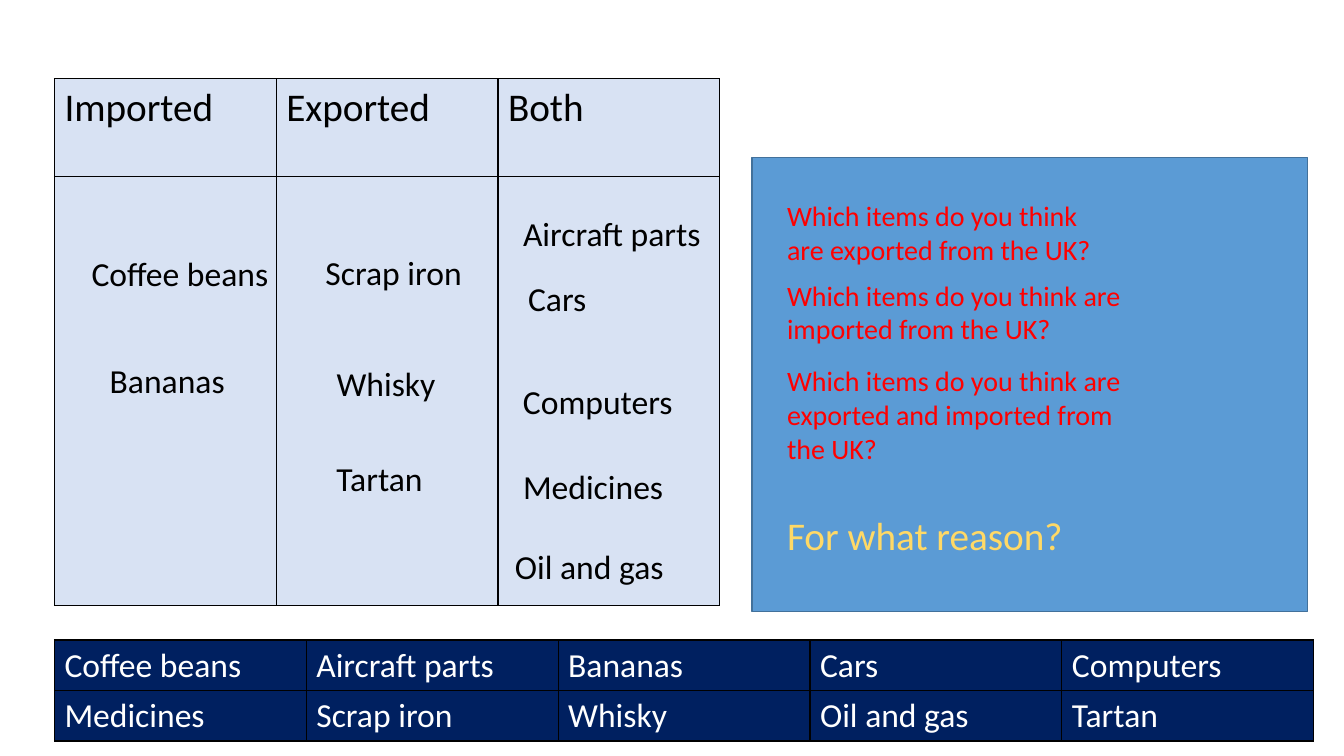
from lxml import etree
from pptx import Presentation
from pptx.dml.color import RGBColor
from pptx.enum.shapes import MSO_SHAPE
from pptx.oxml.ns import qn
from pptx.util import Pt

RECTANGLE = MSO_SHAPE.RECTANGLE
FONT = "Calibri"
BLACK, WHITE, RED, GOLD = "000000", "FFFFFF", "FF0000", "FFD966"
NAVY, PALE, BLUE, BLUE_EDGE = "002060", "D8E2F3", "5B9BD5", "42719B"

# Content
HEADINGS = [["Imported", "Exported", "Both"], ["", "", ""]]
GOODS = [
    ["Coffee beans", "Aircraft parts", "Bananas", "Cars", "Computers"],
    ["Medicines", "Scrap iron", "Whisky", "Oil and gas", "Tartan"],
]
# Sorted goods: name, left, top, width
ANSWERS = [
    ("Coffee beans", 58.3, 177.1, 146.9),
    ("Bananas", 71.3, 253.4, 97.2),
    ("Scrap iron", 225.4, 176.4, 113),
    ("Whisky", 233.3, 255.6, 85.7),
    ("Tartan", 233.3, 323.3, 77),
    ("Aircraft parts", 366.5, 148.3, 143.3),
    ("Cars", 370.1, 195.1, 56.9),
    ("Computers", 366.5, 268.6, 122.4),
    ("Medicines", 366.5, 329, 115.9),
    ("Oil and gas", 360.7, 386.6, 121.7),
]
# Questions: lines, top, height, size, colour
QUESTIONS = [
    (["Which items do you think", "are exported from the UK?"], 138.2, 77.8, 20, RED),
    (["Which items do you think are", "imported from the UK?"], 195.1, 55.4, 20, RED),
    (["Which items do you think are", "exported and imported from", "the UK?"],
     256.3, 79.9, 20, RED),
    (["For what reason?"], 361.4, 41, 28, GOLD),
]

# Layout
TABLE_LEFT = 38.9
QUESTION_LEFT, QUESTION_WIDTH = 555.1, 357.1
ANSWER_HEIGHT = 36


def colour(hex_code):
    return RGBColor.from_string(hex_code)


def write(frame, lines, *, size, color, wrap=True):
    frame.word_wrap = wrap
    for i, line in enumerate(lines):
        paragraph = frame.paragraphs[0] if i == 0 else frame.add_paragraph()
        paragraph.text = line
        paragraph.font.name = FONT
        paragraph.font.size = Pt(size)
        paragraph.font.color.rgb = colour(color)


def add_text(slide, lines, left, top, width, height, **style):
    box = slide.shapes.add_textbox(Pt(left), Pt(top), Pt(width), Pt(height))
    write(box.text_frame, lines, **style)


def add_borders(cell):
    properties = cell._tc.get_or_add_tcPr()
    for i, side in enumerate(("lnL", "lnR", "lnT", "lnB")):
        line = etree.Element(qn("a:" + side), w=str(Pt(1)))
        fill = etree.SubElement(line, qn("a:solidFill"))
        etree.SubElement(fill, qn("a:srgbClr"), val=BLACK)
        properties.insert(i, line)


def add_grid(slide, rows, top, column_width, row_heights, fill, **style):
    columns = len(rows[0])
    table = slide.shapes.add_table(
        len(rows), columns, Pt(TABLE_LEFT), Pt(top),
        Pt(column_width * columns), Pt(sum(row_heights))).table
    for column in table.columns:
        column.width = Pt(column_width)
    for r, (row, height) in enumerate(zip(rows, row_heights)):
        table.rows[r].height = Pt(height)
        for c, label in enumerate(row):
            cell = table.cell(r, c)
            cell.fill.solid()
            cell.fill.fore_color.rgb = colour(fill)
            add_borders(cell)
            write(cell.text_frame, [label], **style)


def main():
    deck = Presentation()
    deck.slide_width, deck.slide_height = Pt(960), Pt(540)
    slide = deck.slides.add_slide(deck.slide_layouts[6])

    # Question panel
    panel = slide.shapes.add_shape(RECTANGLE, Pt(537.1), Pt(112.3), Pt(396.7), Pt(324.7))
    panel.shadow.inherit = False
    panel.fill.solid()
    panel.fill.fore_color.rgb = colour(BLUE)
    panel.line.color.rgb = colour(BLUE_EDGE)
    panel.line.width = Pt(1)
    for lines, top, height, size, color in QUESTIONS:
        add_text(slide, lines, QUESTION_LEFT, top, QUESTION_WIDTH, height,
                 size=size, color=color)

    # Word bank and sorting table
    add_grid(slide, GOODS, 457.2, 179.9, [36, 36], NAVY, size=24, color=WHITE)
    add_grid(slide, HEADINGS, 56.2, 158.4, [69.8, 306.7], PALE, size=28, color=BLACK)

    # Sorted goods
    for name, left, top, width in ANSWERS:
        add_text(slide, [name], left, top, width, ANSWER_HEIGHT,
                 size=24, color=BLACK, wrap=False)

    deck.save("out.pptx")


if __name__ == "__main__":
    main()
